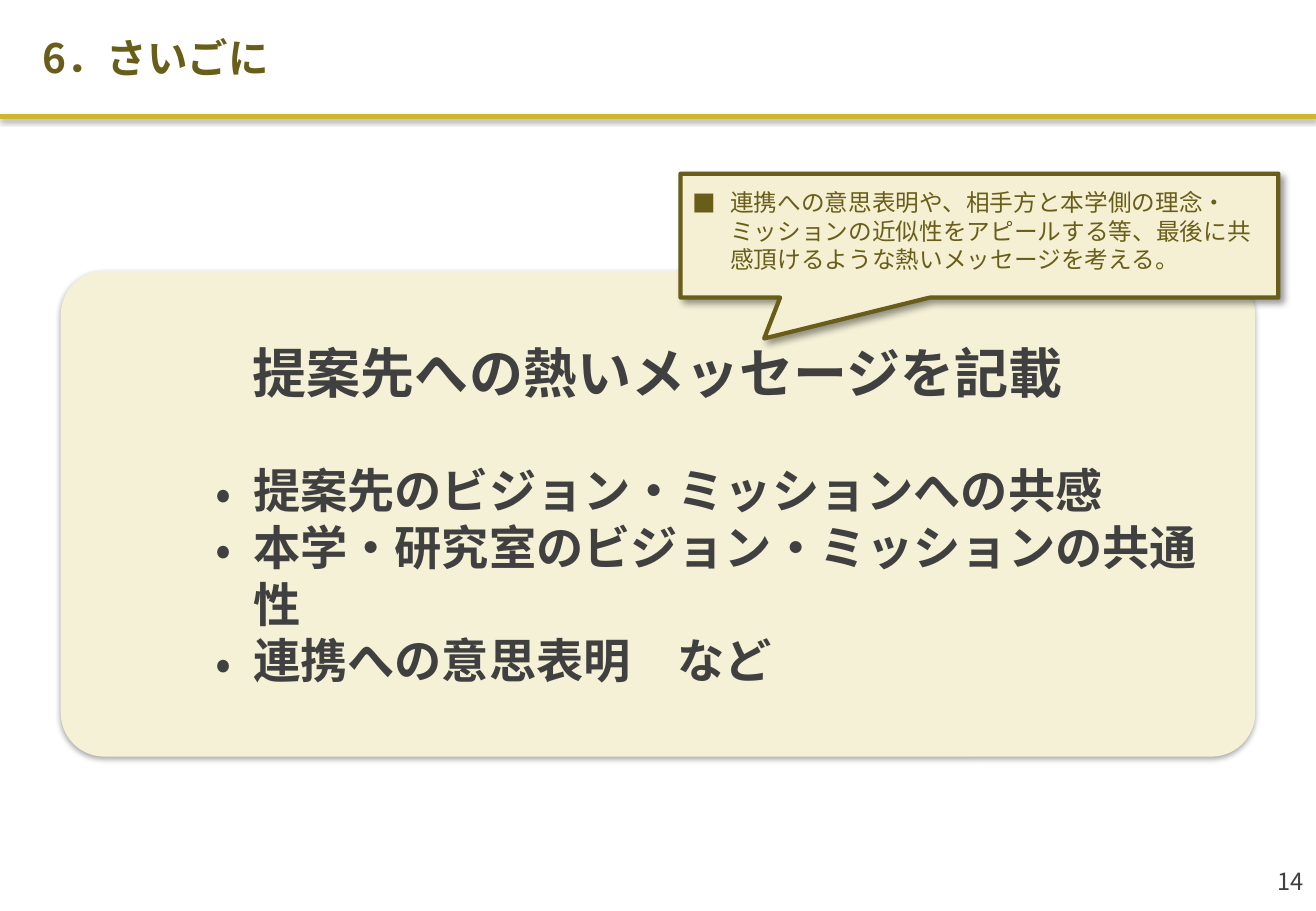
from dataclasses import dataclass
from typing import Optional

from lxml import etree
from pptx import Presentation
from pptx import util as u
from pptx.dml.color import RGBColor
from pptx.enum import shapes, text
from pptx.oxml import ns

FONT = "Noto Sans CJK JP"
COLORS = {
    "gold": "CDB731",
    "olive": "695E19",
    "cream": "F5F1D7",
    "note": "F5F0D3",
    "ink": "404040",
    "black": "000000",
}


@dataclass(frozen=True)
class Shadow:
    alpha: int
    blur: float
    dist: float
    angle: int


@dataclass(frozen=True)
class Panel:
    kind: shapes.MSO_SHAPE
    box: tuple[float, float, float, float]
    adjustments: tuple[float, ...]
    fill: str
    shadow: Shadow
    line: Optional[str] = None


CARD = Panel(shapes.MSO_SHAPE.ROUNDED_RECTANGLE, (0.5, 2.23, 9.83, 4), (0.09,),
             "cream", Shadow(35, 3.1, 1.8, 90))
CALLOUT = Panel(shapes.MSO_SHAPE.RECTANGULAR_CALLOUT, (5.6, 1.43, 4.92, 1.02), (-0.36, 0.83),
                "note", Shadow(40, 4, 3, 45), "olive")
POINTS = (
    "提案先のビジョン・ミッションへの共感",
    "本学・研究室のビジョン・ミッションの共通性",
    "連携への意思表明　など",
)


def rgb(name: str) -> RGBColor:
    return RGBColor.from_string(COLORS[name])


def add_shadow(sp, shadow: Shadow) -> None:
    props = sp._element.spPr
    for old in props.findall(ns.qn("a:effectLst")):
        props.remove(old)
    effects = etree.SubElement(props, ns.qn("a:effectLst"))
    outer = etree.SubElement(
        effects, ns.qn("a:outerShdw"), blurRad=str(u.Pt(shadow.blur)),
        dist=str(u.Pt(shadow.dist)), dir=str(shadow.angle * 60000), rotWithShape="0")
    color = etree.SubElement(outer, ns.qn("a:srgbClr"), val=COLORS["black"])
    etree.SubElement(color, ns.qn("a:alpha"), val=str(shadow.alpha * 1000))


def add_panel(s, panel: Panel):
    sp = s.shapes.add_shape(panel.kind, *map(u.Inches, panel.box))
    for i, value in enumerate(panel.adjustments):
        sp.adjustments[i] = value
    sp.fill.solid()
    sp.fill.fore_color.rgb = rgb(panel.fill)
    if panel.line:
        sp.line.color.rgb = rgb(panel.line)
        sp.line.width = u.Pt(2.5)
    else:
        sp.line.fill.background()
    add_shadow(sp, panel.shadow)
    return sp


def set_frame(tf, anchor: text.MSO_ANCHOR, inset: float = 0.05) -> None:
    tf.word_wrap = True
    tf.auto_size = text.MSO_AUTO_SIZE.NONE
    tf.vertical_anchor = anchor
    tf.margin_left = tf.margin_right = u.Inches(0.1)
    tf.margin_top = tf.margin_bottom = u.Inches(inset)


def write(p, words: str, *, size: float, color: str, bold: bool = False,
          align: text.PP_ALIGN = text.PP_ALIGN.LEFT, bullet: str = "",
          left: float = 0, before: float = 0, after: float = 0) -> None:
    p.alignment = align
    p.space_before, p.space_after = u.Pt(before), u.Pt(after)
    if bullet:
        props = p._p.get_or_add_pPr()
        props.set("marL", str(u.Inches(left)))
        props.set("indent", str(u.Inches(-0.31)))
        etree.SubElement(props, ns.qn("a:buFont"), typeface=FONT)
        etree.SubElement(props, ns.qn("a:buChar"), char=bullet)
    r = p.add_run()
    r.text = words
    r.font.name, r.font.size, r.font.bold = FONT, u.Pt(size), bold
    r.font.color.rgb = rgb(color)
    etree.SubElement(r._r.get_or_add_rPr(), ns.qn("a:ea"), typeface=FONT)


def add_header(s) -> None:
    rule = s.shapes.add_connector(shapes.MSO_CONNECTOR.STRAIGHT, 0, u.Inches(0.96),
                                  u.Inches(10.83), u.Inches(0.96))
    rule.line.color.rgb = rgb("gold")
    rule.line.width = u.Pt(3)
    add_shadow(rule, Shadow(38, 3.1, 1.6, 90))
    title = s.shapes.title
    title.left, title.top, title.width, title.height = map(u.Inches, (0.25, 0, 10.33, 0.94))
    set_frame(title.text_frame, text.MSO_ANCHOR.MIDDLE)
    write(title.text_frame.paragraphs[0], "6．さいごに", size=24, color="olive", bold=True)


def add_message(s) -> None:
    tf = add_panel(s, CARD).text_frame
    set_frame(tf, text.MSO_ANCHOR.MIDDLE)
    write(tf.paragraphs[0], "提案先への熱いメッセージを記載", size=32, color="ink", bold=True,
          align=text.PP_ALIGN.CENTER, after=34)
    for point in POINTS:
        write(tf.add_paragraph(), point, size=28, color="ink", bold=True, bullet="•", left=1.38)


def add_advice(s) -> None:
    tf = add_panel(s, CALLOUT).text_frame
    set_frame(tf, text.MSO_ANCHOR.TOP, 0.12)
    write(tf.paragraphs[0],
          "連携への意思表明や、相手方と本学側の理念・ミッションの近似性をアピールする等、"
          "最後に共感頂けるような熱いメッセージを考える。",
          size=14, color="olive", bullet="■", left=0.31, before=2.8)


def add_page_number(s) -> None:
    sp = s.shapes.add_textbox(*map(u.Inches, (9.97, 7.02, 0.86, 0.4)))
    set_frame(sp.text_frame, text.MSO_ANCHOR.BOTTOM)
    write(sp.text_frame.paragraphs[0], "14", size=14, color="ink", align=text.PP_ALIGN.RIGHT)


def main() -> None:
    prs = Presentation()
    prs.slide_width, prs.slide_height = u.Inches(10.83), u.Inches(7.5)
    s = prs.slides.add_slide(prs.slide_layouts[5])
    add_header(s)
    add_message(s)
    add_page_number(s)
    add_advice(s)
    prs.save("out.pptx")


if __name__ == "__main__":
    main()
